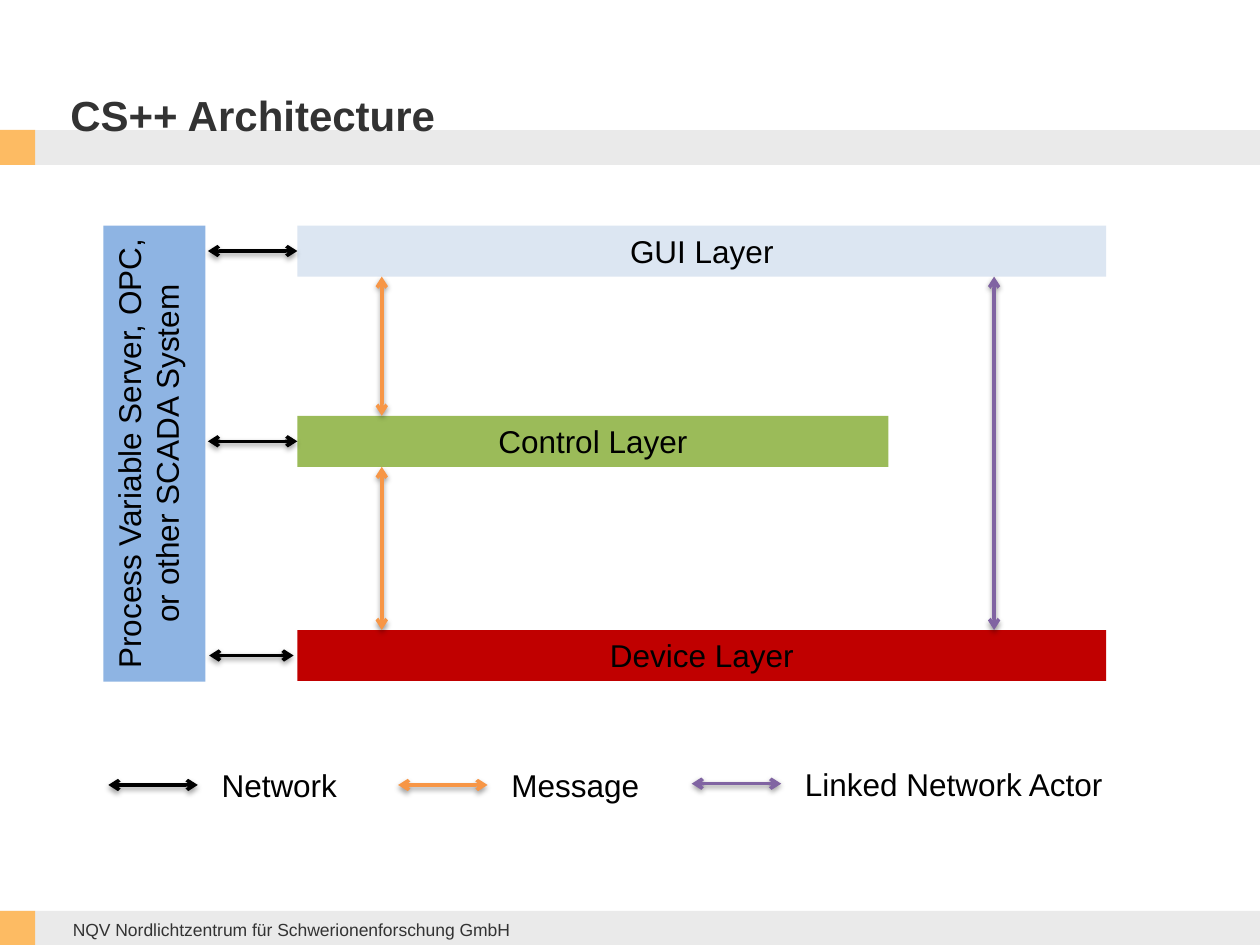
from dataclasses import dataclass
from typing import Optional

from lxml.etree import SubElement
from pptx import Presentation
from pptx.dml.color import RGBColor
from pptx.enum.shapes import MSO_CONNECTOR, MSO_SHAPE
from pptx.enum.text import MSO_ANCHOR, PP_ALIGN
from pptx.oxml.ns import qn
from pptx.util import Inches, Pt

# The slide is a grid of 100 columns by 75 rows
COLUMNS, ROWS = 100, 75
COLORS = {
    "band": "EAEAEA", "accent": "FDBB63", "heading": "333333", "text": "000000",
    "server": "8EB4E3", "gui": "DCE6F2", "control": "9BBB59", "device": "C00000",
    "network": "000000", "message": "F79646", "actor": "8064A2",
}

presentation = Presentation()
presentation.slide_width, presentation.slide_height = Inches(10), Inches(7.5)
slide = presentation.slides.add_slide(presentation.slide_layouts[6])


@dataclass
class Box:
    """A rectangle in grid columns and rows."""
    left: float
    top: float
    width: float
    height: float

    @property
    def middle(self) -> float:
        return self.top + self.height / 2

    @property
    def bottom(self) -> float:
        return self.top + self.height


@dataclass
class Layer:
    label: str
    color: str
    box: Box
    arrow_start: float
    arrow_end: Optional[float] = None  # None: joined to the layer's left side


@dataclass
class LegendEntry:
    label: str
    color: str
    left: float
    row: float
    label_width: float


def across(columns: float) -> int:
    return round(presentation.slide_width * columns / COLUMNS)


def down(rows: float) -> int:
    return round(presentation.slide_height * rows / ROWS)


def place(box: Box) -> tuple:
    return across(box.left), down(box.top), across(box.width), down(box.height)


def color_of(name: str) -> RGBColor:
    return RGBColor.from_string(COLORS[name])


def write(shape, text: str, *, size=18, color="text", bold=False, wrap=False,
          align=PP_ALIGN.LEFT, anchor=MSO_ANCHOR.TOP) -> None:
    frame = shape.text_frame
    frame.word_wrap = wrap
    frame.vertical_anchor = anchor
    frame.text = text
    for paragraph in frame.paragraphs:
        paragraph.alignment = align
        font = paragraph.font
        font.name, font.size, font.bold = "Arial", Pt(size), bold
        font.color.rgb = color_of(color)


def add_text(box: Box, text: str, **text_format) -> None:
    write(slide.shapes.add_textbox(*place(box)), text, **text_format)


def add_block(box: Box, color: str):
    shape = slide.shapes.add_shape(MSO_SHAPE.RECTANGLE, *place(box))
    shape.shadow.inherit = False
    shape.fill.solid()
    shape.fill.fore_color.rgb = color_of(color)
    shape.line.fill.background()
    return shape


def add_line(start: tuple, end: tuple, color: str, width: float):
    line = slide.shapes.add_connector(
        MSO_CONNECTOR.STRAIGHT, across(start[0]), down(start[1]),
        across(end[0]), down(end[1]))
    line.line.color.rgb = color_of(color)
    line.line.width = Pt(width)
    effects = SubElement(line._element.spPr, qn("a:effectLst"))
    return line, effects


def add_arrow(start: tuple, end: tuple, color: str):
    """A double-headed arrow with a soft shadow below it."""
    arrow, effects = add_line(start, end, color, 2)
    outline = arrow.line._get_or_add_ln()
    for tag in ("a:headEnd", "a:tailEnd"):
        SubElement(outline, qn(tag), type="arrow")
    shadow = SubElement(effects, qn("a:outerShdw"), blurRad=str(Pt(3.1)),
                        dist=str(Pt(1.6)), dir="5400000", rotWithShape="0")
    shade = SubElement(shadow, qn("a:srgbClr"), val=COLORS["text"])
    SubElement(shade, qn("a:alpha"), val="38000")
    return arrow


# Bands, accent squares, footer and title
SQUARE = 2.8
FOOTER_TOP = 72.3
add_block(Box(0, FOOTER_TOP, COLUMNS, SQUARE), "band")
add_line((0, 11.7), (COLUMNS, 11.7), "band", 20)
add_text(Box(4.8, 72.4, 41.3, 2.7), "NQV Nordlichtzentrum für Schwerionenforschung GmbH",
         size=10, color="heading", wrap=True, anchor=MSO_ANCHOR.MIDDLE)
for square_top in (10.3, FOOTER_TOP):
    add_block(Box(0, square_top, SQUARE, SQUARE), "accent")
add_text(Box(4.6, 3, 68.3, 8.6), "CS++ Architecture", size=24, color="heading",
         bold=True, wrap=True, anchor=MSO_ANCHOR.BOTTOM)

# Server column with upward text
server = add_block(Box(8.2, 17.9, 8.1, 36.2), "server")
write(server, "Process Variable Server, OPC,\nor other SCADA System", align=PP_ALIGN.CENTER)
server.text_frame._txBody.bodyPr.set("vert", "vert270")

# Layers, each with its network arrow
LAYER_LEFT, LAYER_HEIGHT, FULL_WIDTH = 23.6, 4.05, 64.2
gui = Layer("GUI Layer", "gui", Box(LAYER_LEFT, 17.9, FULL_WIDTH, LAYER_HEIGHT), 16.5)
control = Layer("Control Layer", "control", Box(LAYER_LEFT, 33, 46.9, LAYER_HEIGHT), 16.5)
device = Layer("Device Layer", "device", Box(LAYER_LEFT, 50, FULL_WIDTH, LAYER_HEIGHT),
               16.6, 23.3)
for layer in (gui, control, device):
    block = add_block(layer.box, layer.color)
    write(block, layer.label, align=PP_ALIGN.CENTER)
    row = layer.box.middle
    network = add_arrow((layer.arrow_start, row), (layer.arrow_end or LAYER_LEFT, row), "network")
    if layer.arrow_end is None:
        network.end_connect(block, 1)

# Arrows between layers
for upper, lower, column, color in (
        (gui, control, 30.3, "message"),
        (control, device, 30.3, "message"),
        (gui, device, 78.9, "actor")):
    add_arrow((column, lower.box.top), (column, upper.box.bottom), color)

# Legend
ARROW_LENGTH, LABEL_OFFSET = 7.1, 8
for entry in (
        LegendEntry("Network", "network", 8.6, 62.3, 11.9),
        LegendEntry("Message", "message", 31.6, 62.3, 12.2),
        LegendEntry("Linked Network Actor", "actor", 54.9, 62.2, 26.1)):
    add_arrow((entry.left, entry.row), (entry.left + ARROW_LENGTH, entry.row), entry.color)
    add_text(Box(entry.left + LABEL_OFFSET, entry.row - 2, entry.label_width, 4), entry.label)

presentation.save("out.pptx")
